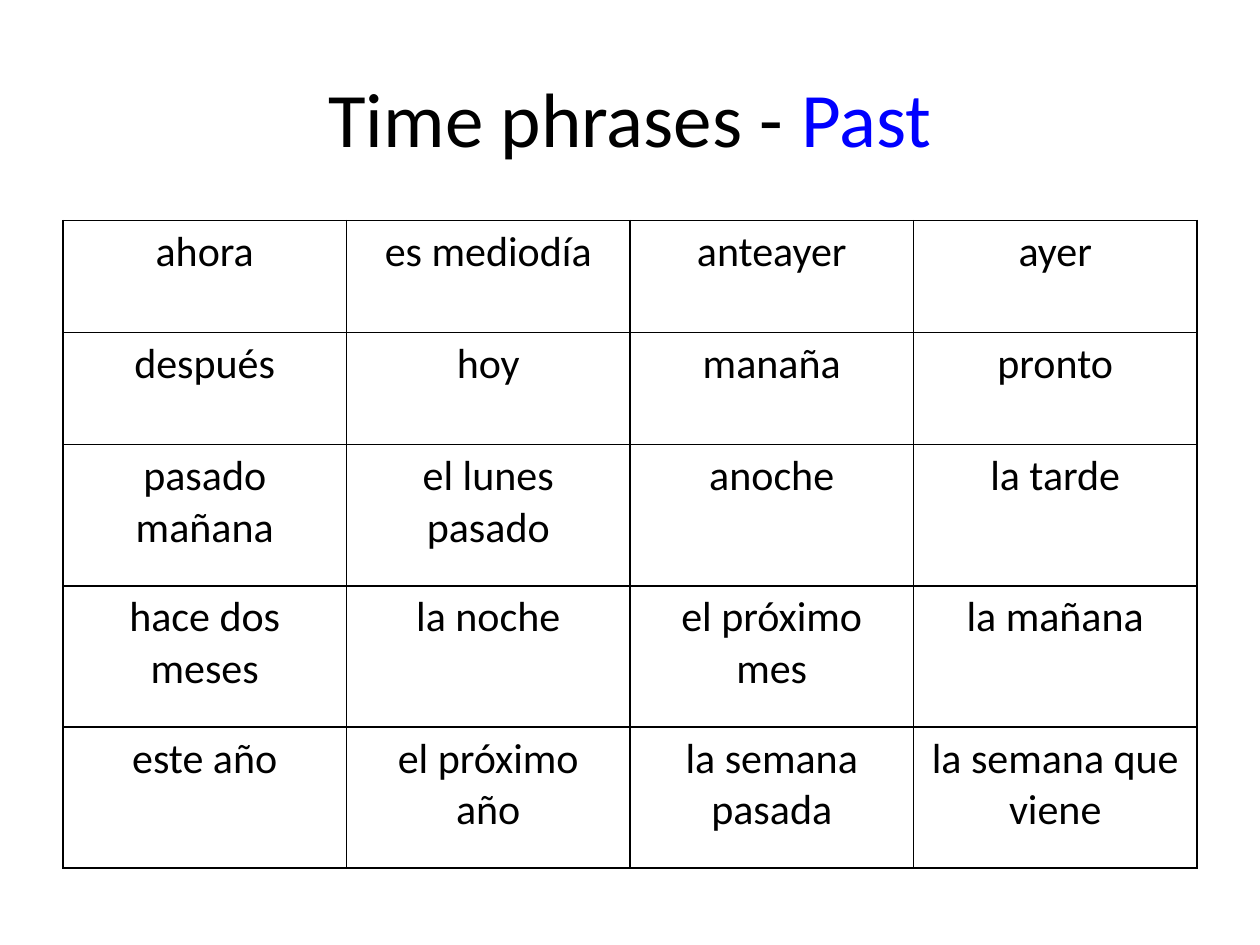
from lxml import etree
from pptx import Presentation
from pptx.dml.color import RGBColor
from pptx.enum import text
from pptx.oxml import ns
from pptx.util import Inches, Pt

BLACK = RGBColor(0x00, 0x00, 0x00)
BLUE = RGBColor(0x00, 0x00, 0xFF)
FONT = "Calibri"

PHRASES = [
    ["ahora", "es mediodía", "anteayer", "ayer"],
    ["después", "hoy", "manaña", "pronto"],
    ["pasado\nmañana", "el lunes\npasado", "anoche", "la tarde"],
    ["hace dos\nmeses", "la noche", "el próximo\nmes", "la mañana"],
    ["este año", "el próximo\naño", "la semana\npasada", "la semana que viene"],
]
ROW_HEIGHTS = [0.89, 0.89, 1.12, 1.12, 1.12]


def style_paragraph(para, size):
    para.alignment = text.PP_ALIGN.CENTER
    para.font.name = FONT
    para.font.size = Pt(size)
    para.font.color.rgb = BLACK


def add_title(page, left, top, width, height):
    box = page.shapes.add_textbox(left, top, width, height)
    frame = box.text_frame
    frame.word_wrap = True
    frame.vertical_anchor = text.MSO_ANCHOR.MIDDLE
    para = frame.paragraphs[0]
    style_paragraph(para, 44)
    for words, color in (("Time phrases - ", BLACK), ("Past", BLUE)):
        span = para.add_run()
        span.text = words
        span.font.color.rgb = color


def set_borders(cell):
    properties = cell._tc.get_or_add_tcPr()
    for index, side in enumerate(("lnL", "lnR", "lnT", "lnB")):
        line = etree.Element(ns.qn(f"a:{side}"), w=str(Pt(1)))
        fill = etree.SubElement(line, ns.qn("a:solidFill"))
        etree.SubElement(fill, ns.qn("a:srgbClr"), val=str(BLACK))
        properties.insert(index, line)


def add_phrase_table(page, left, top, width, height):
    columns = len(PHRASES[0])
    table = page.shapes.add_table(
        len(PHRASES), columns, left, top, width, height
    ).table
    table.first_row = False
    table.horz_banding = False
    for column in table.columns:
        column.width = width // columns
    for row, row_height, phrases in zip(table.rows, ROW_HEIGHTS, PHRASES):
        row.height = Inches(row_height)
        for cell, phrase in zip(row.cells, phrases):
            cell.text = phrase
            cell.fill.background()
            set_borders(cell)
            for para in cell.text_frame.paragraphs:
                style_paragraph(para, 24)


def main():
    deck = Presentation()
    deck.slide_width = Inches(10)
    deck.slide_height = Inches(7.5)
    page = deck.slides.add_slide(deck.slide_layouts[6])
    add_title(page, Inches(0.5), Inches(0.3), Inches(9), Inches(1.25))
    add_phrase_table(page, Inches(0.5), Inches(1.75), Inches(9), Inches(sum(ROW_HEIGHTS)))
    deck.save("out.pptx")


if __name__ == "__main__":
    main()
